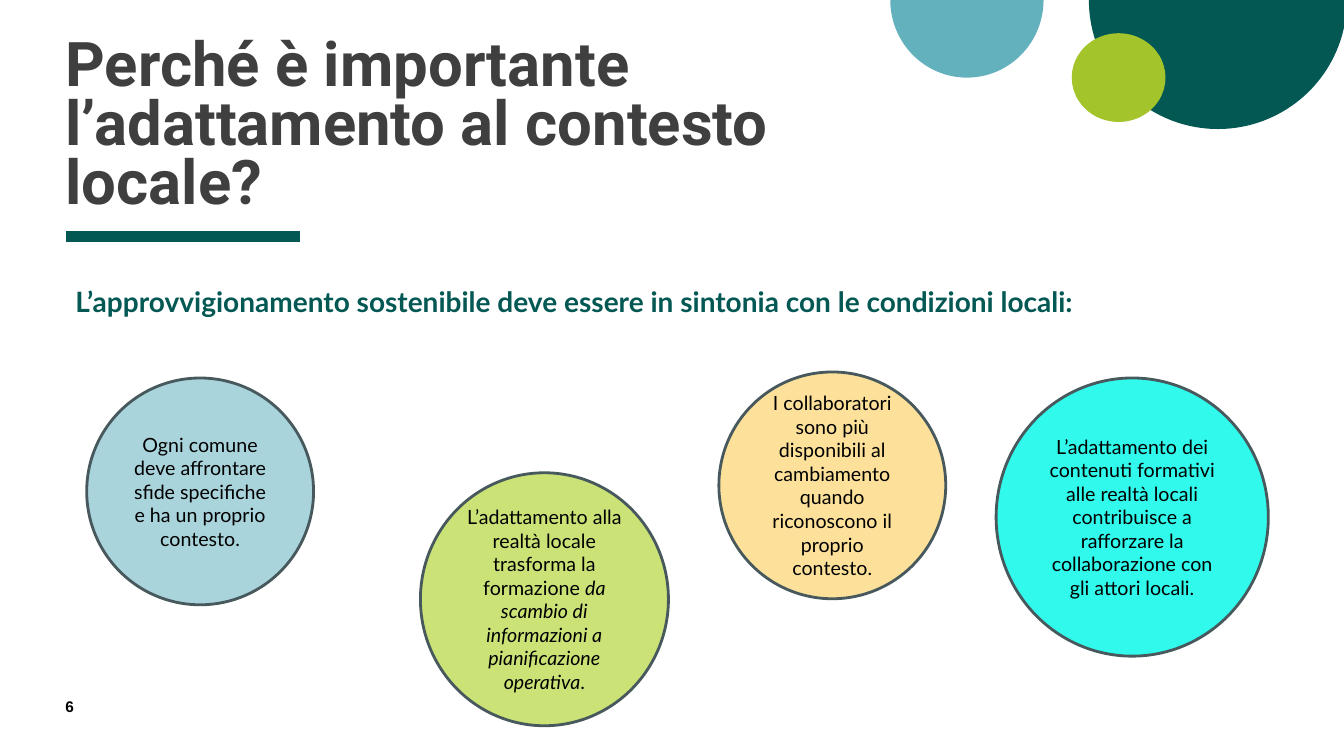
import dataclasses

import pptx
import pptx.dml.color
import pptx.enum.shapes
import pptx.enum.text
import pptx.oxml
import pptx.util
from pptx.util import Inches

SHAPE = pptx.enum.shapes.MSO_SHAPE
ALIGN = pptx.enum.text.PP_ALIGN
ANCHOR = pptx.enum.text.MSO_ANCHOR
NO_FIT = pptx.enum.text.MSO_AUTO_SIZE.NONE


@dataclasses.dataclass(frozen=True)
class Theme:
    petrol: str = "035854"
    teal: str = "64B1BE"
    lime: str = "A3C42A"
    title: str = "3F3F3F"
    text: str = "000000"
    outline: str = "47595C"
    pale_blue: str = "A9D4DB"
    pale_yellow: str = "FDE19B"
    pale_green: str = "CBE277"
    aqua: str = "31FAEC"
    title_size: int = 44
    lead_size: int = 20
    body_size: int = 14
    number_size: int = 11


THEME = Theme()
TITLE = dict(name="Roboto", size=THEME.title_size, bold=True, color=THEME.title)
LEAD = dict(name="Lato", size=THEME.lead_size, bold=True, color=THEME.petrol)
BODY = dict(name="Lato", size=THEME.body_size, bold=False, color=THEME.text)
NUMBER = dict(name="Arial", size=THEME.number_size, bold=True, color=THEME.text)

HALF_DISCS = [
    ((10.8, -1.28, 2.56, 2.56), THEME.petrol),
    ((8.83, -0.77, 1.52, 1.54), THEME.teal),
]

BUBBLES = [
    ((0.86, 3.75, 2.25, 2.25), THEME.pale_blue,
     [("Ogni comune deve affrontare sfide specifiche e ha un proprio contesto.", False)]),
    ((7.13, 3.69, 2.25, 2.25), THEME.pale_yellow,
     [("I collaboratori sono più disponibili al cambiamento quando riconoscono "
       "il proprio contesto.", False)]),
    ((4.17, 4.69, 2.46, 2.51), THEME.pale_green,
     [("L’adattamento alla realtà locale trasforma la formazione ", False),
      ("da scambio di informazioni a pianificazione operativa", True),
      (".", False)]),
    ((9.88, 3.75, 2.7, 2.76), THEME.aqua,
     [("L’adattamento dei contenuti formativi alle realtà locali contribuisce a "
       "rafforzare la collaborazione con gli attori locali.", False)]),
]


def rgb(value):
    return pptx.dml.color.RGBColor.from_string(value)


def set_font(font, values):
    for key, value in values.items():
        if key == "color":
            font.color.rgb = rgb(value)
        else:
            setattr(font, key, pptx.util.Pt(value) if key == "size" else value)


def write(sp, runs, values, align=ALIGN.LEFT, anchor=ANCHOR.TOP, inset=(0.1, 0.05)):
    tf = sp.text_frame
    across, down = map(Inches, inset)
    frame = dict(word_wrap=True, auto_size=NO_FIT, vertical_anchor=anchor,
                 margin_left=across, margin_right=across,
                 margin_top=down, margin_bottom=down)
    for key, value in frame.items():
        setattr(tf, key, value)
    p = tf.paragraphs[0]
    p.alignment = align
    for text, italic in runs:
        r = p.add_run()
        r.text = text
        set_font(r.font, {**values, "italic": italic})
    return p


def add_title(s, box, text):
    sp = s.shapes.title
    for key, value in zip(("left", "top", "width", "height"), map(Inches, box)):
        setattr(sp, key, value)
    p = write(sp, [(text, False)], TITLE, anchor=ANCHOR.BOTTOM, inset=(0, 0))
    p.line_spacing = 0.8


def add_text(s, box, text, values, inset):
    sp = s.shapes.add_textbox(*map(Inches, box))
    write(sp, [(text, False)], values, inset=inset)


def add_disc(s, kind, box, fill, outline=None):
    sp = s.shapes.add_shape(kind, *map(Inches, box))
    sp.shadow.inherit = False
    sp.fill.solid()
    sp.fill.fore_color.rgb = rgb(fill)
    if outline:
        sp.line.color.rgb = rgb(outline)
        sp.line.width = pptx.util.Pt(2)
    else:
        sp.line.fill.background()
    return sp


def add_half_disc(s, box, fill):
    sp = add_disc(s, SHAPE.PIE, box, fill)
    sp.adjustments[0] = 0
    sp.adjustments[1] = 108


def add_bubble(s, box, fill, runs):
    sp = add_disc(s, SHAPE.FLOWCHART_CONNECTOR, box, fill, THEME.outline)
    write(sp, runs, BODY, ALIGN.CENTER, ANCHOR.MIDDLE)


def add_rule(s, left, right, y):
    line = s.shapes.add_connector(pptx.enum.shapes.MSO_CONNECTOR.STRAIGHT,
                                  Inches(left), Inches(y), Inches(right), Inches(y))
    line.line.color.rgb = rgb(THEME.petrol)
    line.line.width = pptx.util.Pt(8)
    sp_pr = line._element.spPr
    sp_pr.append(sp_pr.makeelement(pptx.oxml.ns.qn("a:effectLst"), {}))


def main():
    prs = pptx.Presentation()
    prs.slide_width = Inches(13.33)
    prs.slide_height = Inches(7.5)
    s = prs.slides.add_slide(prs.slide_layouts[5])
    for box, fill in HALF_DISCS:
        add_half_disc(s, box, fill)
    add_disc(s, SHAPE.OVAL, (10.63, 0.33, 0.93, 0.88), THEME.lime)
    add_rule(s, 0.65, 2.98, 2.35)
    add_title(s, (0.65, 0.41, 7.42, 1.74),
              "Perché è importante l’adattamento al contesto locale?")
    add_text(s, (0.65, 6.92, 0.57, 0.27), "6", NUMBER, (0, 0))
    add_text(s, (0.65, 2.77, 12.03, 0.44),
             "L’approvvigionamento sostenibile deve essere in sintonia "
             "con le condizioni locali:", LEAD, (0.1, 0.05))
    for box, fill, runs in BUBBLES:
        add_bubble(s, box, fill, runs)
    prs.save("out.pptx")


if __name__ == "__main__":
    main()
